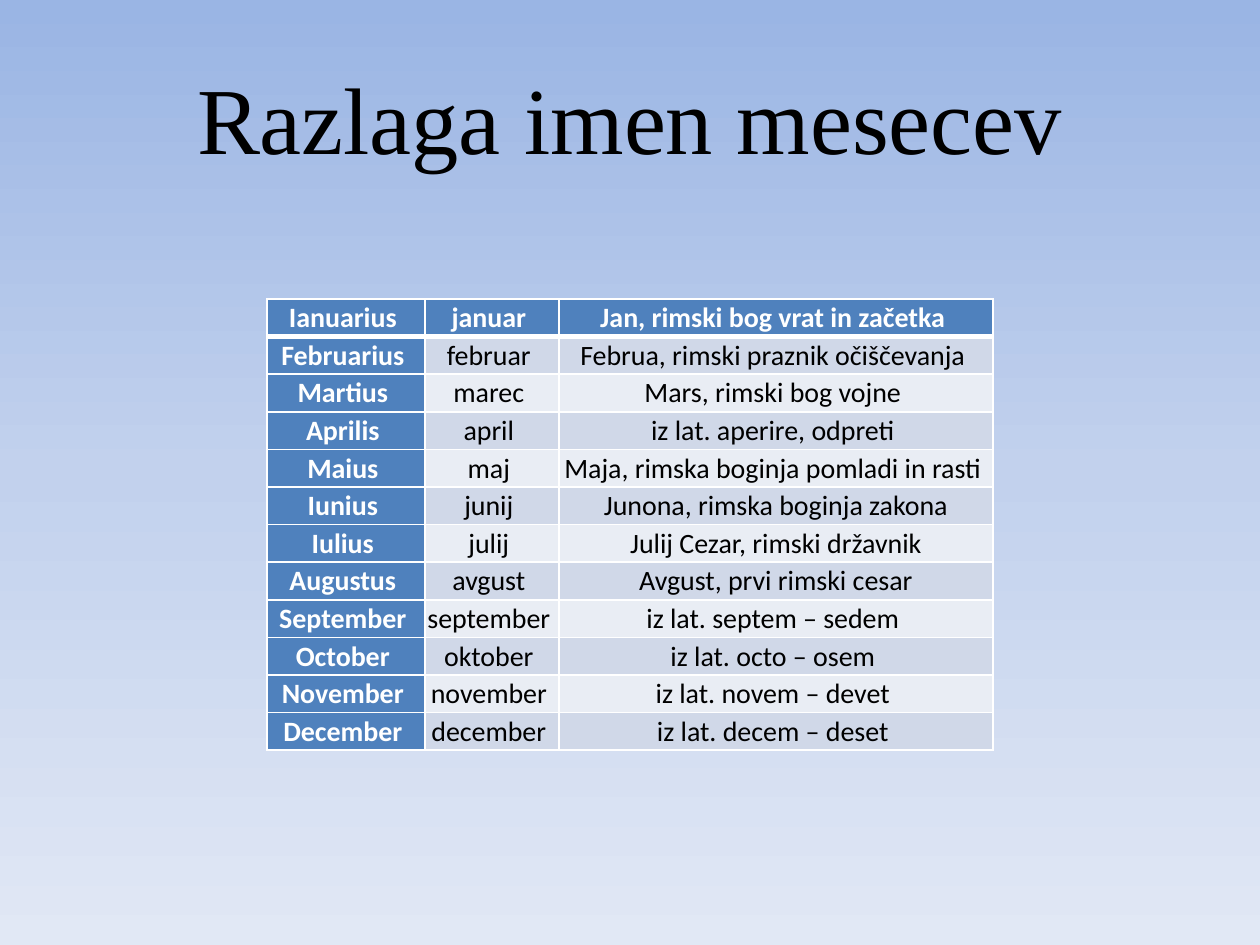
"""Build a slide with a table explaining the Latin and Slovene month names."""
import copy

import pptx
import pptx.dml.color
import pptx.enum.text
import pptx.oxml
import pptx.oxml.ns
import pptx.util

COLORS = {
    "sky_top": "9AB5E4", "sky_middle": "C2D1ED", "sky_bottom": "E1E8F5",
    "accent": "4F81BD", "band_dark": "D0D8E8", "band_light": "E9EDF4",
    "white": "FFFFFF", "black": "000000",
}
EMU_PER_PX = 914400 / 126
CENTER = pptx.enum.text.PP_ALIGN.CENTER
MIDDLE = pptx.enum.text.MSO_ANCHOR.MIDDLE

MONTHS = [
    ("Ianuarius ", "januar ", "Jan, rimski bog vrat in začetka "),
    ("Februarius ", "februar ", "Februa, rimski praznik očiščevanja "),
    ("Martius ", "marec ", "Mars, rimski bog vojne "),
    ("Aprilis ", "april ", "iz lat. aperire, odpreti "),
    ("Maius ", "maj ", "Maja, rimska boginja pomladi in rasti "),
    ("Iunius ", "junij ", "Junona, rimska boginja zakona"),
    ("Iulius ", "julij ", "Julij Cezar, rimski državnik"),
    ("Augustus ", "avgust ", "Avgust, prvi rimski cesar"),
    ("September ", "september ", "iz lat. septem – sedem "),
    ("October ", "oktober ", "iz lat. octo – osem "),
    ("November ", "november ", "iz lat. novem – devet "),
    ("December ", "december ", "iz lat. decem – deset "),
]
COLUMN_WIDTHS = [158, 134, 434]
ROW_HEIGHT = 35
CELL_FORMAT = {"margin_left": 1, "margin_right": 1, "margin_top": 2, "margin_bottom": 2}


def px(length):
    return pptx.util.Emu(round(length * EMU_PER_PX))


def write(frame, text, color, font_format):
    paragraph = frame.paragraphs[0]
    paragraph.alignment = CENTER
    run = paragraph.add_run()
    run.text = text
    run.font.color.rgb = pptx.dml.color.RGBColor.from_string(COLORS[color])
    for attribute, value in font_format.items():
        setattr(run.font, attribute, value)


deck = pptx.Presentation()
deck.slide_width, deck.slide_height = px(1260), px(945)
slide = deck.slides.add_slide(deck.slide_layouts[6])

sky = slide.background.fill
sky.gradient()
sky.gradient_angle = 270
stop_list = slide.element.xpath(".//a:gsLst")[0]
stop_list.append(copy.deepcopy(stop_list[0]))
sky_colors = ["sky_top", "sky_middle", "sky_bottom"]
for stop, position, color in zip(sky.gradient_stops, [0, 0.5, 1], sky_colors):
    stop.position = position
    stop.color.rgb = pptx.dml.color.RGBColor.from_string(COLORS[color])

title = slide.shapes.add_textbox(px(63), px(38), px(1134), px(157)).text_frame
title.word_wrap = True
title.vertical_anchor = MIDDLE
write(title, "Razlaga imen mesecev", "black",
      {"name": "Times New Roman", "size": pptx.util.Pt(54)})

months = slide.shapes.add_table(
    len(MONTHS), len(COLUMN_WIDTHS), px(267), px(299),
    px(sum(COLUMN_WIDTHS)), px(ROW_HEIGHT * len(MONTHS))).table
months.first_col = True
for column, width in zip(months.columns, COLUMN_WIDTHS):
    column.width = px(width)

for row_index, month in enumerate(MONTHS):
    months.rows[row_index].height = px(ROW_HEIGHT)
    band = "band_dark" if row_index % 2 else "band_light"
    for column_index, text in enumerate(month):
        heading = row_index == 0 or column_index == 0
        cell = months.cell(row_index, column_index)
        for attribute, margin in CELL_FORMAT.items():
            setattr(cell, attribute, px(margin))
        cell.vertical_anchor = MIDDLE
        cell.fill.solid()
        cell.fill.fore_color.rgb = pptx.dml.color.RGBColor.from_string(
            COLORS["accent" if heading else band])
        write(cell.text_frame, text, "white" if heading else "black",
              {"name": "Calibri", "size": pptx.util.Pt(16), "bold": heading})
        border_widths = {"lnL": 1, "lnR": 1, "lnT": 3 if row_index == 1 else 1,
                         "lnB": 3 if row_index == 0 else 1}
        cell_properties = cell.fill.fore_color and months.cell(
            row_index, column_index)._tc.get_or_add_tcPr()
        for order, (side, width) in enumerate(border_widths.items()):
            cell_properties.insert(order, pptx.oxml.parse_xml(
                f'<a:{side} {pptx.oxml.ns.nsdecls("a")} w="{pptx.util.Pt(width)}">'
                f'<a:solidFill><a:srgbClr val="{COLORS["white"]}"/></a:solidFill>'
                f'</a:{side}>'))

deck.save("out.pptx")
